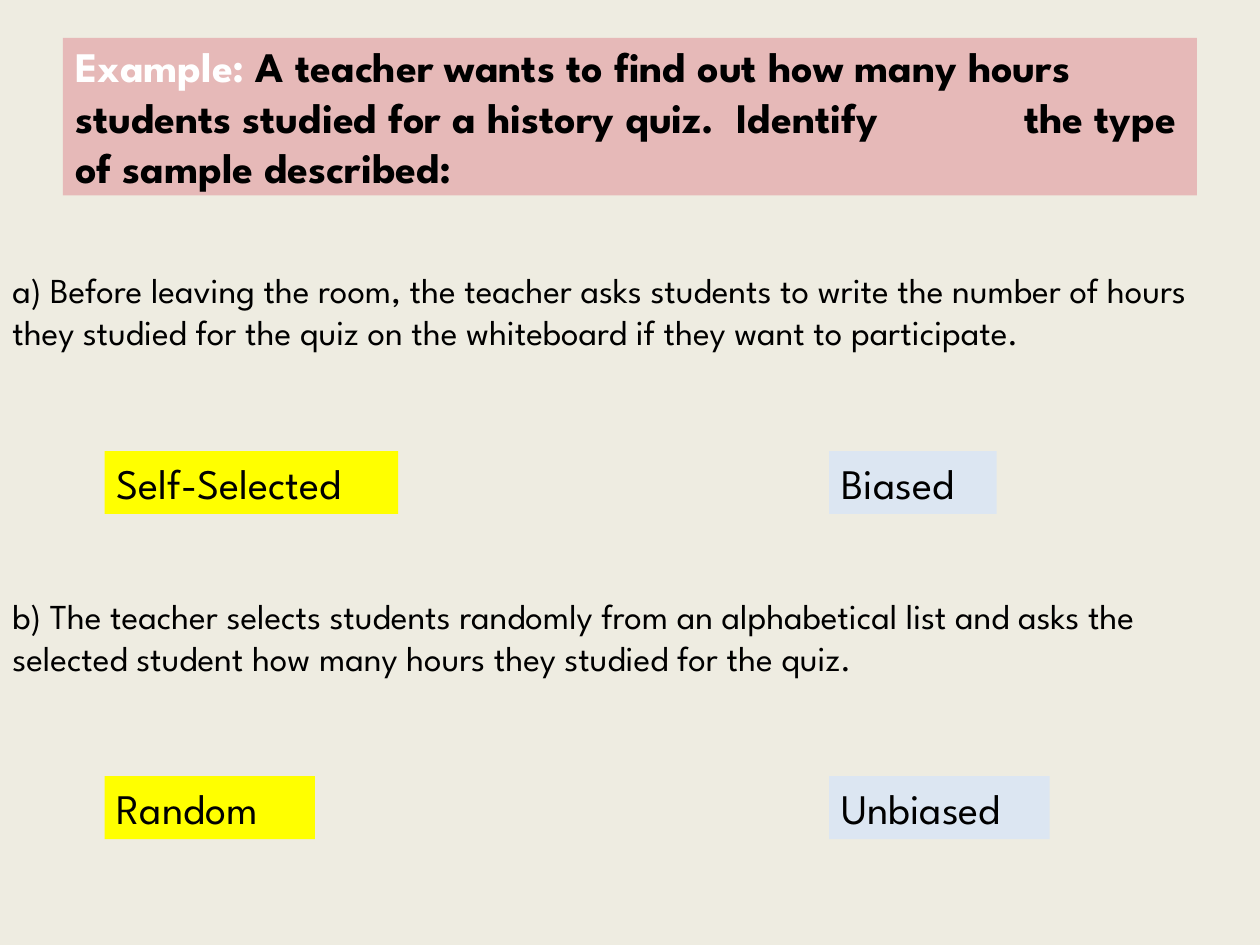
from dataclasses import dataclass

from lxml import etree
from pptx import Presentation
from pptx.dml.color import RGBColor
from pptx.enum import shapes, text
from pptx.oxml import ns
from pptx.util import Inches, Pt


@dataclass(frozen=True)
class Theme:
    """Colours, font and type sizes of the slide."""
    font: str = "League Spartan"
    background: str = "EEECE1"
    title_fill: str = "E6B9B8"
    sample_fill: str = "FFFF00"
    bias_fill: str = "DCE6F2"
    ink: str = "000000"
    light: str = "FFFFFF"
    large: int = 24
    body: int = 20


THEME = Theme()


def add_run(p, words, size, color=THEME.ink, bold=False):
    """Append one styled run to a paragraph."""
    r = p.add_run()
    r.text = words
    r.font.name = THEME.font
    r.font.size = Pt(size)
    r.font.bold = bold
    r.font.color.rgb = RGBColor.from_string(color)


def add_tab_stop(p, position):
    """Give a paragraph one left tab stop."""
    tabs = etree.SubElement(p._p.get_or_add_pPr(), ns.qn("a:tabLst"))
    etree.SubElement(tabs, ns.qn("a:tab"), pos=str(position), algn="l")


def add_box(s, left, top, width, height, fill, anchor=text.MSO_ANCHOR.TOP):
    """Add a filled rectangle and return its left-aligned paragraph."""
    sp = s.shapes.add_shape(shapes.MSO_SHAPE.RECTANGLE, Inches(left),
                            Inches(top), Inches(width), Inches(height))
    sp.shadow.inherit = False
    sp.fill.solid()
    sp.fill.fore_color.rgb = RGBColor.from_string(fill)
    sp.line.fill.background()
    tf = sp.text_frame
    tf.word_wrap = True
    tf.vertical_anchor = anchor
    p = tf.paragraphs[0]
    p.alignment = text.PP_ALIGN.LEFT
    return p


def add_title(s):
    """Add the heading that states the example."""
    p = add_box(s, 0.5, 0.3, 9, 1.25, THEME.title_fill, text.MSO_ANCHOR.MIDDLE)
    add_tab_stop(p, Inches(7.53))
    add_run(p, "Example: ", THEME.large, THEME.light, True)
    add_run(p, "A teacher wants to find out how many hours students studied "
            "for a history quiz.  Identify \tthe type of sample described:",
            THEME.large, bold=True)


def add_question(s, top, height, words):
    """Add a full-width question."""
    tf = s.shapes.add_textbox(0, Inches(top), Inches(10), Inches(height)).text_frame
    tf.word_wrap = True
    add_run(tf.paragraphs[0], words, THEME.body)


def add_answer(s, left, top, width, fill, words):
    """Add a coloured answer label."""
    add_run(add_box(s, left, top, width, 0.5, fill), words, THEME.large)


def main():
    """Build and save the slide."""
    prs = Presentation()
    prs.slide_width, prs.slide_height = Inches(10), Inches(7.5)
    s = prs.slides.add_slide(prs.slide_layouts[6])
    s.background.fill.solid()
    s.background.fill.fore_color.rgb = RGBColor.from_string(THEME.background)
    add_title(s)
    questions = [
        (2.08, 1.11, "a) Before leaving the room, the teacher asks students to "
         "write the number of hours they studied for the quiz on the "
         "whiteboard if they want to participate."),
        (4.67, 0.77, "b) The teacher selects students randomly from an "
         "alphabetical list and asks the selected student how many hours "
         "they studied for the quiz."),
    ]
    for question in questions:
        add_question(s, *question)
    answers = [
        (3.58, "Self-Selected", 2.33, "Biased", 1.33),
        (6.16, "Random", 1.67, "Unbiased", 1.75),
    ]
    for top, sample, sample_width, bias, bias_width in answers:
        add_answer(s, 0.83, top, sample_width, THEME.sample_fill, sample)
        add_answer(s, 6.58, top, bias_width, THEME.bias_fill, bias)
    prs.save("out.pptx")


if __name__ == "__main__":
    main()
